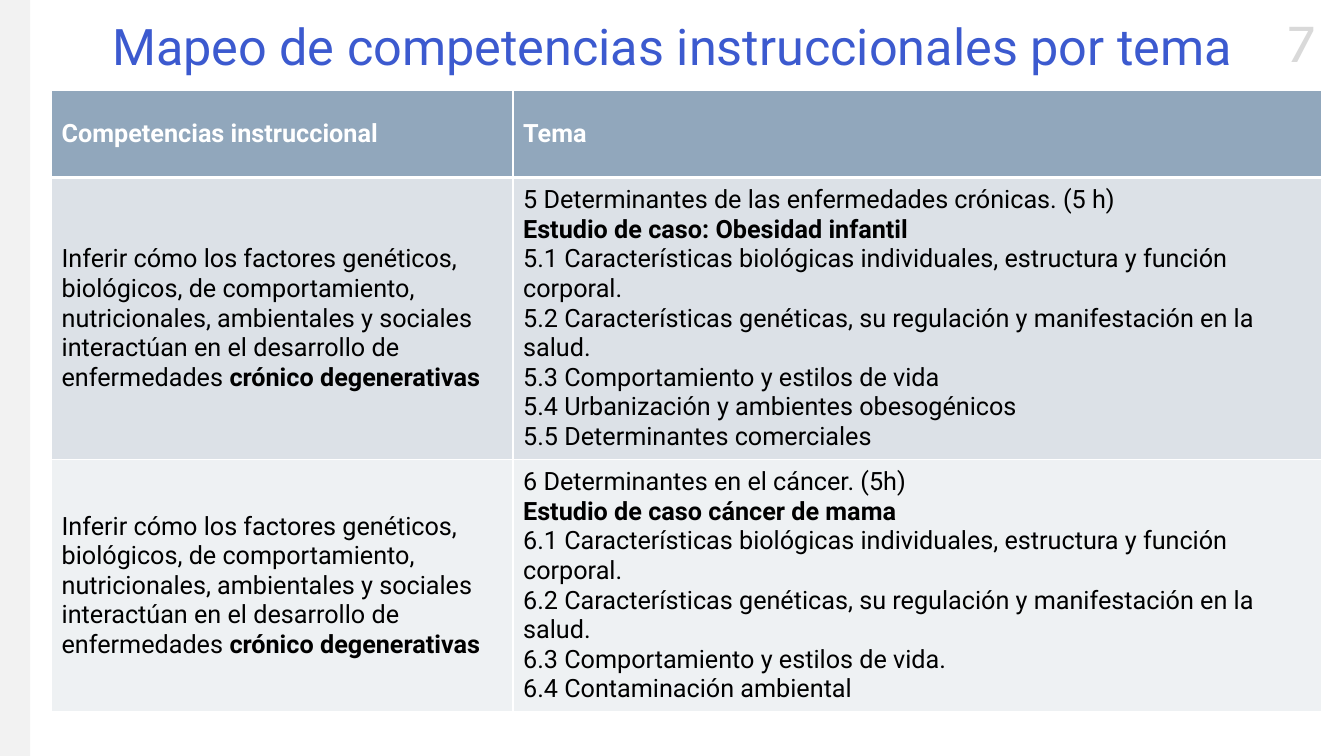
from lxml.etree import SubElement
from pptx import Presentation
from pptx.dml.color import RGBColor
from pptx.enum.shapes import MSO_SHAPE
from pptx.enum.text import MSO_ANCHOR, PP_ALIGN
from pptx.oxml.ns import qn
from pptx.util import Cm, Pt

COLORS = {
    "white": "FFFFFF",
    "black": "000000",
    "title": "3C5ACF",
    "number": "D9D9D9",
    "strip": "F2F2F2",
    "header": "91A7BC",
    "chronic": "DCE1E7",
    "cancer": "EEF1F3",
}


def write(frame, text, size=18, font="Roboto", color="black", bold=False,
          align=PP_ALIGN.LEFT, spacing=None):
    for index, line in enumerate(text.split("\n")):
        paragraph = frame.add_paragraph() if index else frame.paragraphs[0]
        paragraph.alignment = align
        paragraph.line_spacing = spacing
        for part, piece in enumerate(line.split("**")):
            if piece:
                run = paragraph.add_run()
                run.text = piece
                run.font.size = Pt(size)
                run.font.name = font
                run.font.bold = bold or part % 2 == 1
                run.font.color.rgb = RGBColor.from_string(COLORS[color])


def add_border(cell, side, width):
    line = SubElement(cell._tc.get_or_add_tcPr(), qn(f"a:ln{side}"), w=str(Pt(width)))
    fill = SubElement(line, qn("a:solidFill"))
    SubElement(fill, qn("a:srgbClr"), val=COLORS["white"])


presentation = Presentation()
presentation.slide_width = Cm(33.87)
presentation.slide_height = Cm(19.05)
slide = presentation.slides.add_slide(presentation.slide_layouts[6])

strip = slide.shapes.add_shape(MSO_SHAPE.RECTANGLE, 0, 0, Cm(0.76), Cm(19.05))
strip.shadow.inherit = False
strip.fill.solid()
strip.fill.fore_color.rgb = RGBColor.from_string(COLORS["strip"])
strip.line.fill.background()

page_number = slide.shapes.add_textbox(Cm(31.85), Cm(0.05), Cm(1.9), Cm(1.96)).text_frame
page_number.word_wrap = False
write(page_number, "7", size=40, font="Karla", color="number", align=PP_ALIGN.CENTER)

title = slide.shapes.add_textbox(Cm(2.34), Cm(0.18), Cm(29.21), Cm(2.13)).text_frame
title.word_wrap = True
title.vertical_anchor = MSO_ANCHOR.MIDDLE
write(title, "Mapeo de competencias instruccionales por tema", size=36,
      color="title", align=PP_ALIGN.CENTER, spacing=0.9)

competence = (
    "Inferir cómo los factores genéticos, biológicos, de comportamiento, "
    "nutricionales, ambientales y sociales interactúan en el desarrollo de "
    "enfermedades **crónico degenerativas**"
)
chronic_topics = """5 Determinantes de las enfermedades crónicas. (5 h)
**Estudio de caso: Obesidad infantil**
5.1 Características biológicas individuales, estructura y función corporal.
5.2 Características genéticas, su regulación y manifestación en la salud.
5.3 Comportamiento y estilos de vida
5.4 Urbanización y ambientes obesogénicos
5.5 Determinantes comerciales"""
cancer_topics = """6 Determinantes en el cáncer. (5h)
**Estudio de caso cáncer de mama**
6.1 Características biológicas individuales, estructura y función corporal.
6.2 Características genéticas, su regulación y manifestación en la salud.
6.3 Comportamiento y estilos de vida.
6.4 Contaminación ambiental"""
topic_rows = [
    ("header", 2.18, ("Competencias instruccional", "Tema")),
    ("chronic", 6.95, (competence, chronic_topics)),
    ("cancer", 6.2, (competence, cancer_topics)),
]

topic_map = slide.shapes.add_table(3, 2, Cm(1.3), Cm(2.29), Cm(32), Cm(15.33)).table
topic_map.columns[0].width = Cm(11.63)
topic_map.columns[1].width = Cm(20.37)
for row, (band, height, texts) in enumerate(topic_rows):
    topic_map.rows[row].height = Cm(height)
    is_header = band == "header"
    for column, text in enumerate(texts):
        cell = topic_map.cell(row, column)
        for side in "LRTB":
            under_header = (row, side) in [(0, "B"), (1, "T")]
            add_border(cell, side, 3 if under_header else 1)
        cell.fill.solid()
        cell.fill.fore_color.rgb = RGBColor.from_string(COLORS[band])
        cell.vertical_anchor = MSO_ANCHOR.MIDDLE
        write(cell.text_frame, text, bold=is_header,
              color="white" if is_header else "black")

presentation.save("out.pptx")
